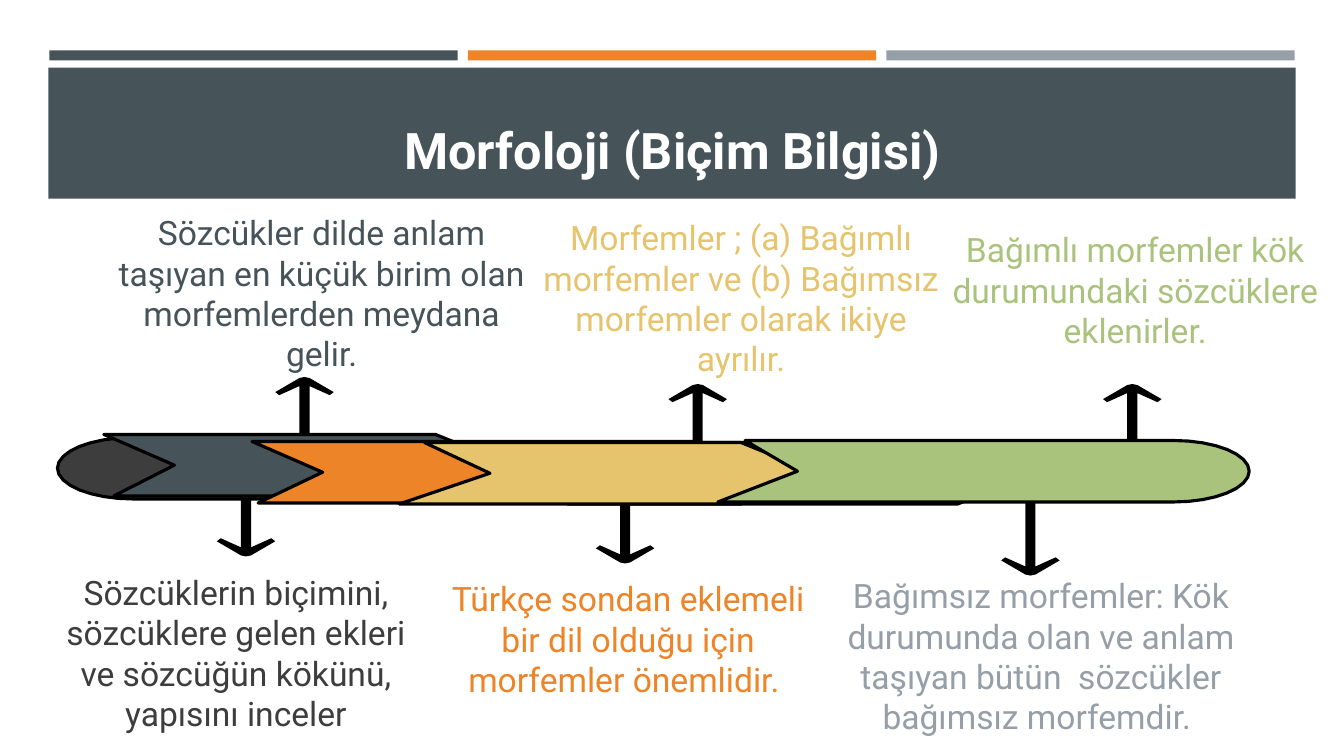
from dataclasses import dataclass
from math import cos, pi, sin

from pptx import Presentation
from pptx import util as u
from pptx.dml.color import RGBColor
from pptx.enum import shapes, text

COLUMNS, ROWS = 13.33, 7.5
CELL = u.Inches(1)
BAND_HEIGHT = 0.61
SHOULDER = 0.75
ROUND_STEPS = 16
HALF_ARROW = [(0, 0), (0.05, 0.01), (0.29, 0.15), (0.25, 0.18), (0.05, 0.09), (0.05, 0.78)]


@dataclass(frozen=True)
class Theme:
    """Colours, font and type sizes of the slide."""
    font: str = "Roboto"
    title_size: int = 36
    caption_size: int = 24
    outline_width: float = 2.25
    white: str = "FFFFFF"
    black: str = "000000"
    charcoal: str = "3D3D3D"
    slate: str = "465359"
    orange: str = "ED8428"
    grey: str = "969FA7"
    sand: str = "E6C46D"
    green: str = "A9C37C"


@dataclass(frozen=True)
class Step:
    """One step: band place, notch (top, middle, bottom), arrow tip and caption."""
    color: str
    band: tuple
    notch: tuple
    tip: tuple
    caption: tuple
    words: str
    round_right: bool = False


THEME = Theme()
STEPS = [
    Step(THEME.charcoal, (0.57, 4.34, 3.47), (), (2.44, 5.52), (0.39, 5.88, 3.9, 1.19),
         "Sözcüklerin biçimini, sözcüklere gelen ekleri ve sözcüğün kökünü, yapısını inceler"),
    Step(THEME.slate, (1.03, 4.31, 4.04), (0, 0.7, 0.1), (3.02, 3.74), (0.97, 2.28, 4.44, 1.25),
         "Sözcükler dilde anlam taşıyan en küçük birim olan morfemlerden meydana gelir."),
    Step(THEME.orange, (2.5, 4.38, 5.19), (0, 0.7, 0.06), (6.2, 5.59), (4.28, 5.59, 3.9, 1.49),
         "Türkçe sondan eklemeli bir dil olduğu için morfemler önemlidir. "),
    Step(THEME.grey, (5.55, 4.39, 4.7), (0, 0.77, 0.08), (10.22, 5.71), (7.9, 6.3, 4.85, 0.41),
         "Bağımsız morfemler: Kök durumunda olan ve anlam taşıyan bütün  sözcükler bağımsız morfemdir. "),
    Step(THEME.sand, (3.96, 4.39, 4.14), (0.25, 0.9, 0), (6.92, 3.81), (5.16, 2.11, 4.38, 1.69),
         "Morfemler ; (a) Bağımlı morfemler ve (b) Bağımsız morfemler olarak ikiye ayrılır."),
    Step(THEME.green, (7.12, 4.37, 5.27), (0.27, 0.79, 0), (11.23, 3.81), (9.31, 2.67, 3.9, 0.41),
         "Bağımlı morfemler kök durumundaki sözcüklere eklenirler.", round_right=True),
]


def cells(*lengths):
    """Turn grid lengths into slide lengths."""
    return [round(length * CELL) for length in lengths]


def paint(shape, fill, line=None):
    """Give a shape a flat fill and an optional outline."""
    shape.shadow.inherit = False
    shape.fill.solid()
    shape.fill.fore_color.rgb = RGBColor.from_string(fill)
    if line:
        shape.line.color.rgb = RGBColor.from_string(line)
        shape.line.width = u.Pt(THEME.outline_width)
    else:
        shape.line.fill.background()


def add_outline(parent, points, fill, line=None):
    """Draw a closed outline through grid points."""
    corners = [cells(*point) for point in points]
    builder = parent.shapes.build_freeform(*corners[0], scale=1.0)
    builder.add_line_segments(corners[1:], close=True)
    paint(builder.convert_to_shape(), fill, line)


def round_end(center, middle, side):
    """Return a half ellipse running down the given side."""
    angles = [pi * step / ROUND_STEPS for step in range(ROUND_STEPS + 1)]
    return [(center + side * SHOULDER * sin(angle), middle - BAND_HEIGHT / 2 * cos(angle))
            for angle in angles]


def add_band(parent, step):
    """Draw a band with a notched or round start and a pointed or round end."""
    left, top, width = step.band
    right, middle = left + width, top + BAND_HEIGHT / 2
    levels = (top, middle, top + BAND_HEIGHT)
    if step.notch:
        start = [(left + inset, y) for inset, y in zip(step.notch, levels)]
    else:
        start = round_end(left + SHOULDER, middle, -1)
    if step.round_right:
        end = round_end(right - SHOULDER, middle, 1)
    else:
        end = [(right - inset, y) for inset, y in zip((SHOULDER, 0, SHOULDER), levels)]
    add_outline(parent, start + end[::-1], step.color, THEME.black)


def add_arrow(parent, step):
    """Draw the arrow from the band to its tip."""
    x, y = step.tip
    direction = 1 if y < step.band[1] else -1
    half = [(dx, y + direction * dy) for dx, dy in HALF_ARROW]
    points = [(x + dx, level) for dx, level in half]
    points += [(x - dx, level) for dx, level in half[:0:-1]]
    add_outline(parent, points, THEME.black)


def add_words(parent, box, words, size, color, anchor, bold=False):
    """Place one centred paragraph in a box."""
    frame = parent.shapes.add_textbox(*cells(*box)).text_frame
    frame.word_wrap = True
    frame.vertical_anchor = anchor
    frame.margin_left = frame.margin_right = frame.margin_top = frame.margin_bottom = CELL // 10
    frame.text = words
    paragraph = frame.paragraphs[0]
    paragraph.alignment = text.PP_ALIGN.CENTER
    font = paragraph.runs[0].font
    font.name, font.size, font.bold = THEME.font, u.Pt(size), bold
    font.color.rgb = RGBColor.from_string(color)


def add_header(slide, box):
    """Draw the three stripes, the banner and the title."""
    left, top, width, height = box
    stripe, gap = 4.05, 0.1
    blocks = [(left + 0.01 + column * (stripe + gap), top, stripe, gap, color)
              for column, color in enumerate((THEME.slate, THEME.orange, THEME.grey))]
    blocks.append((left, top + 0.17, width, height - 0.17, THEME.slate))
    for *block, color in blocks:
        paint(slide.shapes.add_shape(shapes.MSO_SHAPE.RECTANGLE, *cells(*block)), color)
    add_words(slide, (left + 0.16, top + 0.27, width - 0.31, height - 0.36),
              "Morfoloji (Biçim Bilgisi)", THEME.title_size, THEME.white,
              text.MSO_ANCHOR.BOTTOM, bold=True)


def add_step(slide, step):
    """Group the arrow, band and caption of one step."""
    group = slide.shapes.add_group_shape()
    add_arrow(group, step)
    add_band(group, step)
    add_words(group, step.caption, step.words, THEME.caption_size,
              step.color, text.MSO_ANCHOR.MIDDLE)


def main():
    """Build the slide and save it."""
    deck = Presentation()
    deck.slide_width, deck.slide_height = cells(COLUMNS, ROWS)
    slide = deck.slides.add_slide(deck.slide_layouts[6])
    add_header(slide, (0.48, 0.5, 12.37, 1.47))
    for step in STEPS:
        add_step(slide, step)
    deck.save("out.pptx")


if __name__ == "__main__":
    main()
